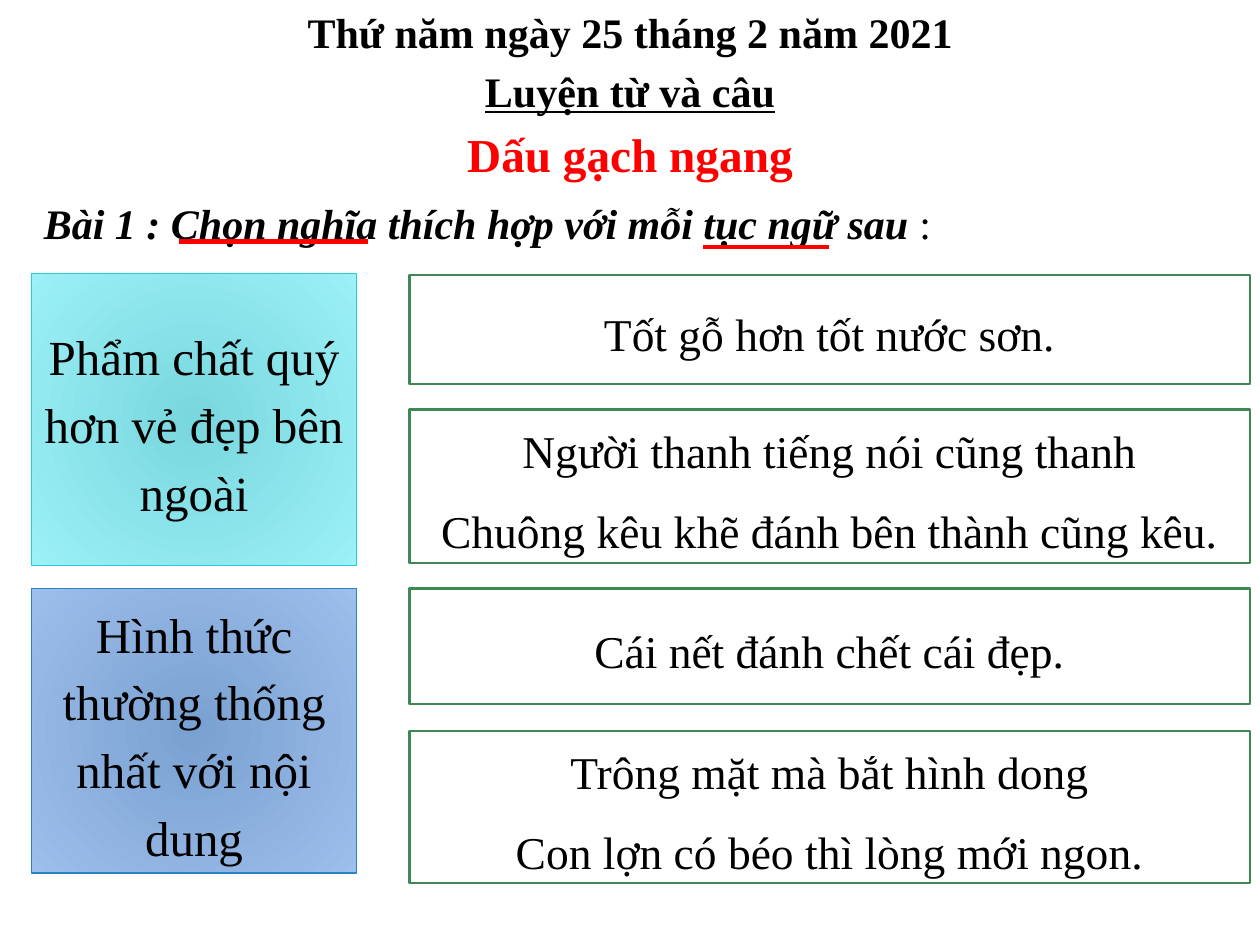
from pptx import Presentation
from pptx import util as u
from pptx.dml.color import RGBColor
from pptx.enum import shapes, text
from pptx.oxml import parse_xml
from pptx.oxml.ns import nsdecls, qn

BLACK = RGBColor(0, 0, 0)
RED = RGBColor(0xFF, 0, 0)
WHITE = RGBColor(0xFF, 0xFF, 0xFF)
GREEN = RGBColor(0x3E, 0x88, 0x53)
TEAL = RGBColor(0x27, 0xCE, 0xD7)
BLUE = RGBColor(0x26, 0x83, 0xC6)
TEAL_GLOW = RGBColor(0x79, 0xD7, 0xDE), RGBColor(0x9C, 0xF0, 0xF7)
BLUE_GLOW = RGBColor(0x79, 0xA1, 0xD1), RGBColor(0x9E, 0xBE, 0xEB)

FONT = "Times New Roman"
WIDTH, HEIGHT = 10, 7.5
MEANING_COLUMN = 0.25, 2.58
PROVERB_COLUMN = 3.25, 6.67

TITLE = "Dấu gạch ngang"
HEADINGS = [
    ("Thứ năm ngày 25 tháng 2 năm 2021", 0.01, False),
    ("Luyện từ và câu", 0.48, True),
]
EXERCISE = "Bài 1 : Chọn nghĩa thích hợp với mỗi tục ngữ sau "
MEANINGS = [
    ("Phẩm chất quý hơn vẻ đẹp bên ngoài", 2.17, 2.32, TEAL, TEAL_GLOW),
    ("Hình thức thường thống nhất với nội dung", 4.67, 2.26, BLUE, BLUE_GLOW),
]
PROVERBS = [
    (["Tốt gỗ hơn tốt nước sơn."], 2.18, 0.87),
    (["Người thanh tiếng nói cũng thanh",
      "Chuông kêu khẽ đánh bên thành cũng kêu."], 3.25, 1.22),
    (["Cái nết đánh chết cái đẹp."], 4.67, 0.92),
    (["Trông mặt mà bắt hình dong",
      "Con lợn có béo thì lòng mới ngon."], 5.8, 1.21),
]
UNDERLINES = [(1.42, 2.92, 1.92), (5.58, 6.58, 1.96)]


def inches(*lengths):
    return [u.Inches(length) for length in lengths]


def style(para, size, color=BLACK, bold=False):
    font = para.font
    font.name, font.size, font.bold = FONT, u.Pt(size), bold
    font.color.rgb = color


def write_heading(box, words, size, color=BLACK):
    frame = box.text_frame
    frame.text = words
    frame.word_wrap = True
    frame.auto_size = text.MSO_AUTO_SIZE.SHAPE_TO_FIT_TEXT
    frame.vertical_anchor = text.MSO_ANCHOR.TOP
    frame.margin_left = frame.margin_right = u.Inches(0.09)
    frame.margin_top = frame.margin_bottom = u.Inches(0.04)
    para = frame.paragraphs[0]
    para.alignment = text.PP_ALIGN.CENTER
    para.space_before = u.Pt(3.5)
    style(para, size, color, bold=True)
    return para


def add_card(page, column, top, height, lines, size, border, weight):
    left, width = column
    card = page.shapes.add_shape(
        shapes.MSO_SHAPE.RECTANGLE, *inches(left, top, width, height))
    card.shadow.inherit = False
    card.fill.solid()
    card.fill.fore_color.rgb = WHITE
    card.line.color.rgb = border
    card.line.width = u.Pt(weight)
    frame = card.text_frame
    frame.word_wrap = True
    frame.vertical_anchor = text.MSO_ANCHOR.MIDDLE
    frame.text = "\n".join(lines)
    for para in frame.paragraphs:
        para.alignment = text.PP_ALIGN.CENTER
        para.line_spacing = 1.15
        para.space_after = u.Pt(10)
        style(para, size)
    return card


def fill_radially(card, colors):
    stops = "".join(
        f'<a:gs pos="{position}"><a:srgbClr val="{color}"/></a:gs>'
        for position, color in zip((0, 100000), colors))
    gradient = parse_xml(
        f'<a:gradFill {nsdecls("a")} rotWithShape="1"><a:gsLst>{stops}</a:gsLst>'
        '<a:path path="circle"><a:fillToRect l="100000" t="100000" '
        'r="100000" b="100000"/></a:path></a:gradFill>')
    properties = card._element.spPr
    properties.replace(properties.find(qn("a:solidFill")), gradient)


def add_underline(page, start, end, top):
    line = page.shapes.add_connector(
        shapes.MSO_CONNECTOR.STRAIGHT, *inches(start, top, end, top))
    line.line.color.rgb = RED
    line.line.width = u.Pt(2.75)
    line._element.spPr.append(parse_xml(f'<a:effectLst {nsdecls("a")}/>'))


def add_exercise(page):
    box = page.shapes.add_textbox(*inches(0.25, 1.52, 9.67, 0.5))
    frame = box.text_frame
    frame.word_wrap = True
    frame.auto_size = text.MSO_AUTO_SIZE.SHAPE_TO_FIT_TEXT
    para = frame.paragraphs[0]
    style(para, 24)
    phrase = para.add_run()
    phrase.text = EXERCISE
    phrase.font.bold = phrase.font.italic = True
    para.add_run().text = ":"


def main():
    """Build the slide matching proverbs with their meanings."""
    deck = Presentation()
    deck.slide_width, deck.slide_height = inches(WIDTH, HEIGHT)
    page = deck.slides.add_slide(deck.slide_layouts[5])

    title = page.shapes.title
    title.left, title.top, title.width, title.height = inches(0, 0.95, WIDTH, 0.54)
    write_heading(title, TITLE, 27, RED)
    for words, top, underlined in HEADINGS:
        box = page.shapes.add_textbox(*inches(0, top, WIDTH, 0.49))
        write_heading(box, words, 24).font.underline = underlined

    add_exercise(page)
    for words, top, height, border, glow in MEANINGS:
        card = add_card(page, MEANING_COLUMN, top, height, [words], 28, border, 0.75)
        fill_radially(card, glow)
    for lines, top, height in PROVERBS:
        add_card(page, PROVERB_COLUMN, top, height, lines, 26, GREEN, 1.25)
    for underline in UNDERLINES:
        add_underline(page, *underline)

    deck.save("out.pptx")


if __name__ == "__main__":
    main()
